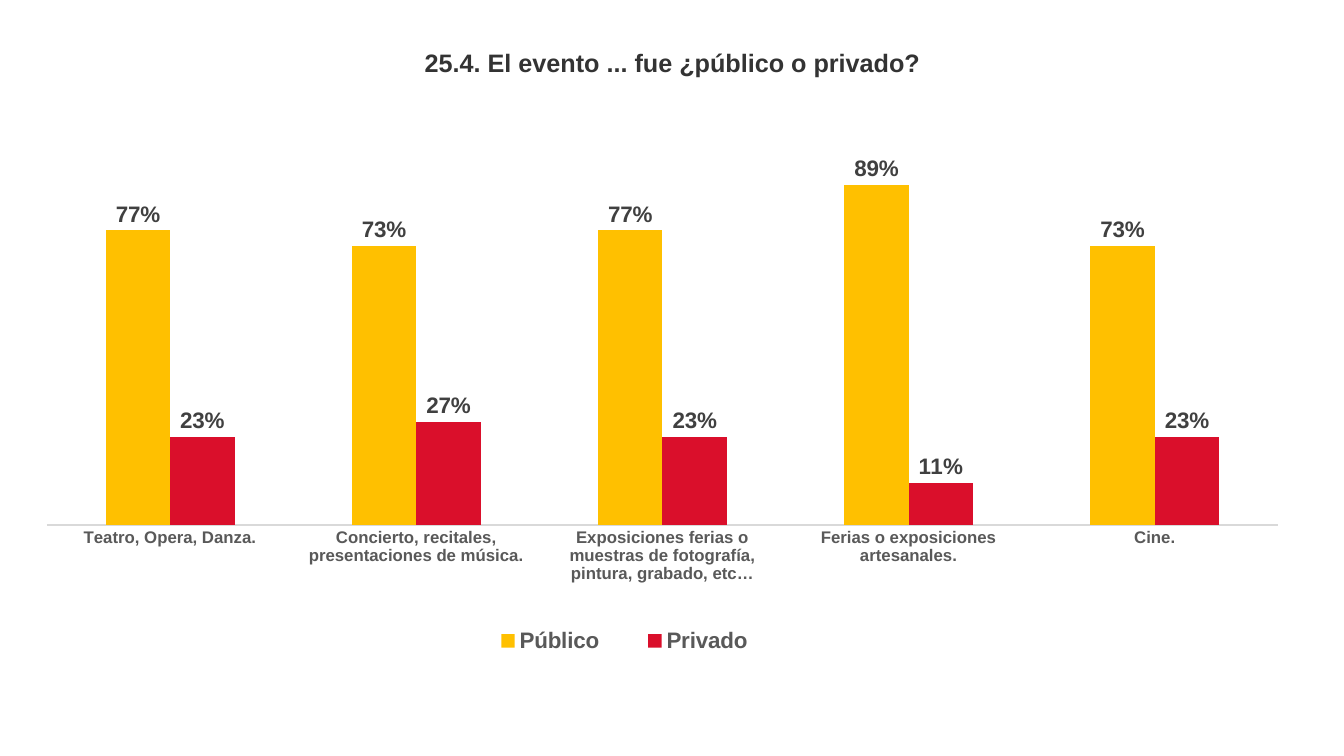
import pptx
import pptx.chart.data
import pptx.dml.color
import pptx.enum.chart
import pptx.enum.text
import pptx.oxml
import pptx.oxml.ns
import pptx.util
from pptx.util import Inches

GREY = "595959"
EVENTS = [
    "Teatro, Opera, Danza.",
    "Concierto, recitales, presentaciones de música.",
    "Exposiciones ferias o muestras de fotografía, pintura, grabado, etc…",
    "Ferias o exposiciones artesanales.",
    "Cine.",
]
ACCESS = {  # series name: (colour, values)
    "Público": ("FFC000", [0.77, 0.73, 0.77, 0.89, 0.73]),
    "Privado": ("DA0F2B", [0.23, 0.27, 0.23, 0.11, 0.23]),
}


def colour(value):
    return pptx.dml.color.RGBColor.from_string(value)


class SlideBuilder:
    """Holds the style and the current slide."""

    font_name = "Arial"

    def __init__(self, presentation):
        self.slide = presentation.slides.add_slide(presentation.slide_layouts[6])

    def style(self, font, size, hex_colour):
        font.name = self.font_name
        font.size = pptx.util.Pt(size)
        font.bold = True
        font.color.rgb = colour(hex_colour)

    def title(self, text, left, top, width, height):
        box = self.slide.shapes.add_textbox(
            Inches(left), Inches(top), Inches(width), Inches(height))
        frame = box.text_frame
        frame.word_wrap = True
        frame.vertical_anchor = pptx.enum.text.MSO_ANCHOR.MIDDLE
        paragraph = frame.paragraphs[0]
        paragraph.text = text
        paragraph.alignment = pptx.enum.text.PP_ALIGN.CENTER
        self.style(paragraph.font, 18, "333333")

    def place(self, element, x, y, width, height, inner=False):
        """Fix a chart part at fractions of the chart area."""
        for old in element.findall(pptx.oxml.ns.qn("c:layout")):
            element.remove(old)
        target = '<c:layoutTarget val="inner"/>' if inner else ""
        layout = pptx.oxml.parse_xml(
            f'<c:layout {pptx.oxml.ns.nsdecls("c")}><c:manualLayout>{target}'
            '<c:xMode val="edge"/><c:yMode val="edge"/>'
            f'<c:x val="{x}"/><c:y val="{y}"/><c:w val="{width}"/><c:h val="{height}"/>'
            '</c:manualLayout></c:layout>')
        if inner:
            element.insert(0, layout)
        else:
            element.find(pptx.oxml.ns.qn("c:legendPos")).addnext(layout)

    def column_chart(self, categories, series, left, top, width, height):
        data = pptx.chart.data.CategoryChartData(number_format="0%")
        data.categories = categories
        for name, (_, values) in series.items():
            data.add_series(name, values)
        chart = self.slide.shapes.add_chart(
            pptx.enum.chart.XL_CHART_TYPE.COLUMN_CLUSTERED,
            Inches(left), Inches(top), Inches(width), Inches(height), data).chart
        chart.has_title = False
        chart.font.name = self.font_name
        chart.font.size = pptx.util.Pt(10)

        # Columns and value labels
        plot = chart.plots[0]
        plot.gap_width = 182
        plot.overlap = 0
        plot.vary_by_categories = False
        for column in plot.series:
            column.format.fill.solid()
            column.format.fill.fore_color.rgb = colour(series[column.name][0])
            labels = column.data_labels
            labels.show_value = True
            labels.number_format = "0%"
            labels.number_format_is_linked = False
            labels.position = pptx.enum.chart.XL_LABEL_POSITION.OUTSIDE_END
            self.style(labels.font, 16, "404040")

        # Axes
        axis = chart.category_axis
        axis.major_tick_mark = pptx.enum.chart.XL_TICK_MARK.NONE
        axis.format.line.color.rgb = colour("D9D9D9")
        axis.format.line.width = pptx.util.Pt(0.75)
        self.style(axis.tick_labels.font, 12, GREY)
        chart.value_axis.minimum_scale = 0
        chart.value_axis.maximum_scale = 1
        chart.value_axis.has_major_gridlines = False
        chart.value_axis.visible = False

        # Legend and plot area
        chart.has_legend = True
        legend = chart.legend
        legend.position = pptx.enum.chart.XL_LEGEND_POSITION.BOTTOM
        legend.include_in_layout = False
        self.style(legend.font, 16, GREY)
        plot_area = chart.element.find(".//" + pptx.oxml.ns.qn("c:plotArea"))
        self.place(plot_area, 0.014, 0.026, 0.972, 0.64, inner=True)
        legend_element = chart.element.find(".//" + pptx.oxml.ns.qn("c:legend"))
        self.place(legend_element, 0.34, 0.82, 0.26, 0.08)


def main():
    presentation = pptx.Presentation()
    presentation.slide_width = Inches(13.33)
    presentation.slide_height = Inches(7.5)
    builder = SlideBuilder(presentation)
    builder.title("25.4. El evento ... fue ¿público o privado?", 0.67, 0.26, 12, 0.71)
    builder.column_chart(EVENTS, ACCESS, 0.29, 1.26, 12.56, 5.93)
    presentation.save("out.pptx")


if __name__ == "__main__":
    main()
